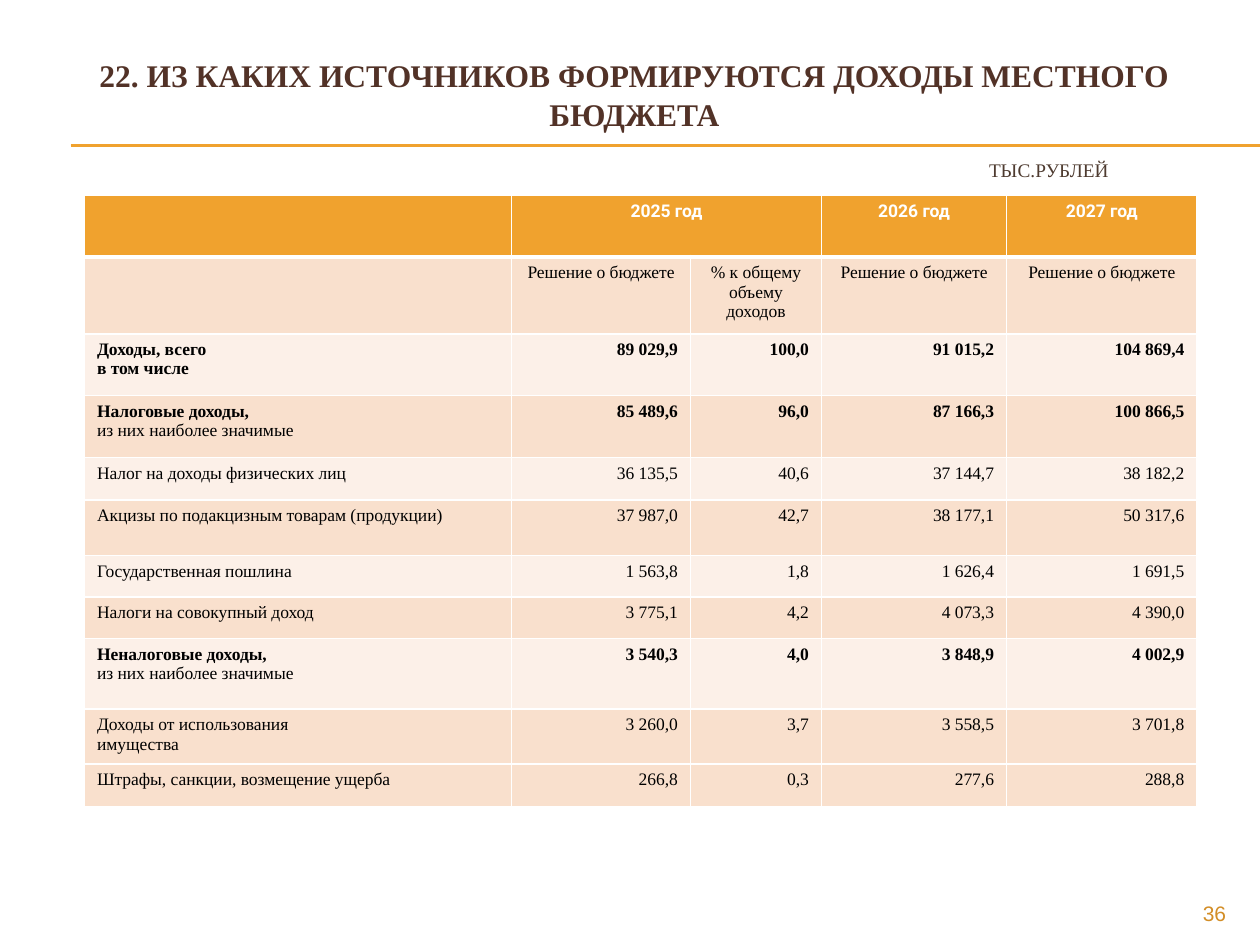
from lxml.etree import SubElement as Sub
from pptx import Presentation
from pptx.dml.color import RGBColor
from pptx.enum.shapes import MSO_CONNECTOR as Conn
from pptx.enum.text import PP_ALIGN as Align
from pptx.oxml.ns import qn
from pptx.util import Inches, Pt

SERIF = "Times New Roman"
GOLD, PEACH, PALE, WHITE = "F0A22E", "F9E0CD", "FCF0E8", "FFFFFF"

COLS = [3.39, 1.42, 1.04, 1.47, 1.51]
HEIGHTS = [0.49, 0.61, 0.49, 0.49, 0.34, 0.44, 0.33, 0.33, 0.56, 0.43, 0.34]
PLAN = "Решение о бюджете"
HEADS = [
    ["", "2025 год", "", "2026 год", "2027 год"],
    ["", PLAN, "% к общему объему доходов", PLAN, PLAN],
]
# Each row: label lines, how many of them are bold, values
ROWS = [
    ("Доходы, всего\nв том числе", 2, ["89 029,9", "100,0", "91 015,2", "104 869,4"]),
    ("Налоговые доходы,\nиз них наиболее значимые", 1,
     ["85 489,6", "96,0", "87 166,3", "100 866,5"]),
    ("Налог на доходы физических лиц", 0, ["36 135,5", "40,6", "37 144,7", "38 182,2"]),
    ("Акцизы по подакцизным товарам (продукции)", 0,
     ["37 987,0", "42,7", "38 177,1", "50 317,6"]),
    ("Государственная пошлина", 0, ["1 563,8", "1,8", "1 626,4", "1 691,5"]),
    ("Налоги на совокупный доход", 0, ["3 775,1", "4,2", "4 073,3", "4 390,0"]),
    ("Неналоговые доходы,\nиз них наиболее значимые", 1,
     ["3 540,3", "4,0", "3 848,9", "4 002,9"]),
    ("Доходы от использования\nимущества", 0, ["3 260,0", "3,7", "3 558,5", "3 701,8"]),
    ("Штрафы, санкции, возмещение ущерба", 0, ["266,8", "0,3", "277,6", "288,8"]),
]


def tint(hue):
    return RGBColor.from_string(hue)


def write(frame, text, size=10, font=SERIF, color="000000", bold=0,
          align=Align.LEFT, lead=None):
    """Fill a text frame, one paragraph a line; the first `bold` lines are bold."""
    frame.word_wrap = True
    for i, line in enumerate(text.split("\n")):
        para = frame.add_paragraph() if i else frame.paragraphs[0]
        para.alignment = align
        if lead:
            para.line_spacing = Pt(lead)
        run = para.add_run()
        run.text = line
        run.font.size, run.font.name, run.font.bold = Pt(size), font, i < bold
        run.font.color.rgb = tint(color)


def label(slide, text, x, y, w, h, pad=0, **style):
    frame = slide.shapes.add_textbox(*map(Inches, (x, y, w, h))).text_frame
    frame.margin_left = frame.margin_right = Inches(pad)
    frame.margin_top = frame.margin_bottom = Inches(pad / 2)
    write(frame, text, **style)


def rule(slide, y):
    line = slide.shapes.add_connector(
        Conn.STRAIGHT, Inches(0.56), Inches(y), Inches(10), Inches(y))
    line.line.color.rgb, line.line.width = tint(GOLD), Pt(0.75)
    Sub(line._element.spPr, qn("a:effectLst"))


def edge(cell, top=1, base=1):
    """Draw white borders, in points."""
    props = cell._tc.get_or_add_tcPr()
    for i, (side, width) in enumerate(zip("LRTB", (1, 1, top, base))):
        line = props.makeelement(qn(f"a:ln{side}"), {"w": str(Pt(width))})
        fill = Sub(line, qn("a:solidFill"))
        Sub(fill, qn("a:srgbClr"), val=WHITE)
        props.insert(i, line)


def paint(cell, fill, **widths):
    cell.fill.solid()
    cell.fill.fore_color.rgb = tint(fill)
    edge(cell, **widths)


def budget(slide):
    grid = slide.shapes.add_table(
        len(HEIGHTS), len(COLS), Inches(0.67), Inches(1.55),
        Inches(sum(COLS)), Inches(sum(HEIGHTS))).table
    for col, width in zip(grid.columns, COLS):
        col.width = Inches(width)
    for row, height in zip(grid.rows, HEIGHTS):
        row.height = Inches(height)

    looks = [dict(font="Roboto", color=WHITE, bold=1), {}]
    for r, (texts, look) in enumerate(zip(HEADS, looks)):
        for c, text in enumerate(texts):
            cell = grid.cell(r, c)
            paint(cell, PEACH if r else GOLD, **({"top": 3} if r else {"base": 3}))
            if text:
                write(cell.text_frame, text, align=Align.CENTER, **look)
    grid.cell(0, 1).merge(grid.cell(0, 2))

    for r, (name, bold, values) in enumerate(ROWS, len(HEADS)):
        fill = PEACH if r % 2 or r == len(HEIGHTS) - 1 else PALE
        for c, text in enumerate([name, *values]):
            cell = grid.cell(r, c)
            paint(cell, fill)
            write(cell.text_frame, text, bold=bold,
                  align=Align.RIGHT if c else Align.LEFT)


def main():
    deck = Presentation()
    deck.slide_width, deck.slide_height = Inches(10), Inches(7.5)
    slide = deck.slides.add_slide(deck.slide_layouts[6])
    for y in (1.15, 1.16):
        rule(slide, y)
    label(slide, "22. ИЗ КАКИХ ИСТОЧНИКОВ ФОРМИРУЮТСЯ ДОХОДЫ МЕСТНОГО БЮДЖЕТА",
          0.31, 0.44, 9.45, 0.62, size=18, color="523227", bold=1,
          align=Align.CENTER, lead=22)
    label(slide, "ТЫС.РУБЛЕЙ", 7.3, 1.26, 1.5, 0.2, size=11, color="4E3B30",
          align=Align.RIGHT)
    budget(slide)
    label(slide, "36", 9, 7.1, 0.83, 0.27, pad=0.1, size=12, font="Arial",
          color="D38E27", align=Align.RIGHT)
    deck.save("out.pptx")


if __name__ == "__main__":
    main()
